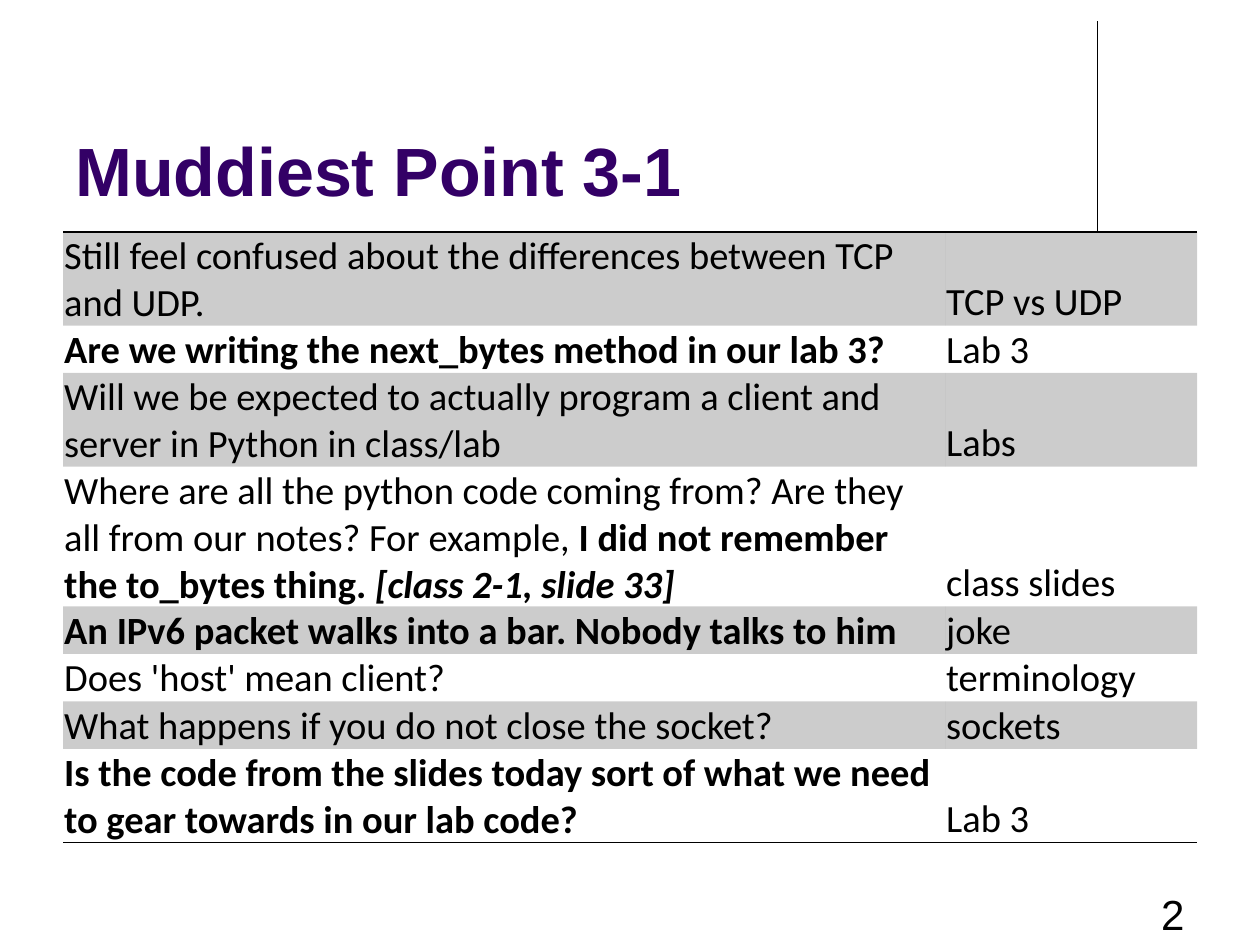
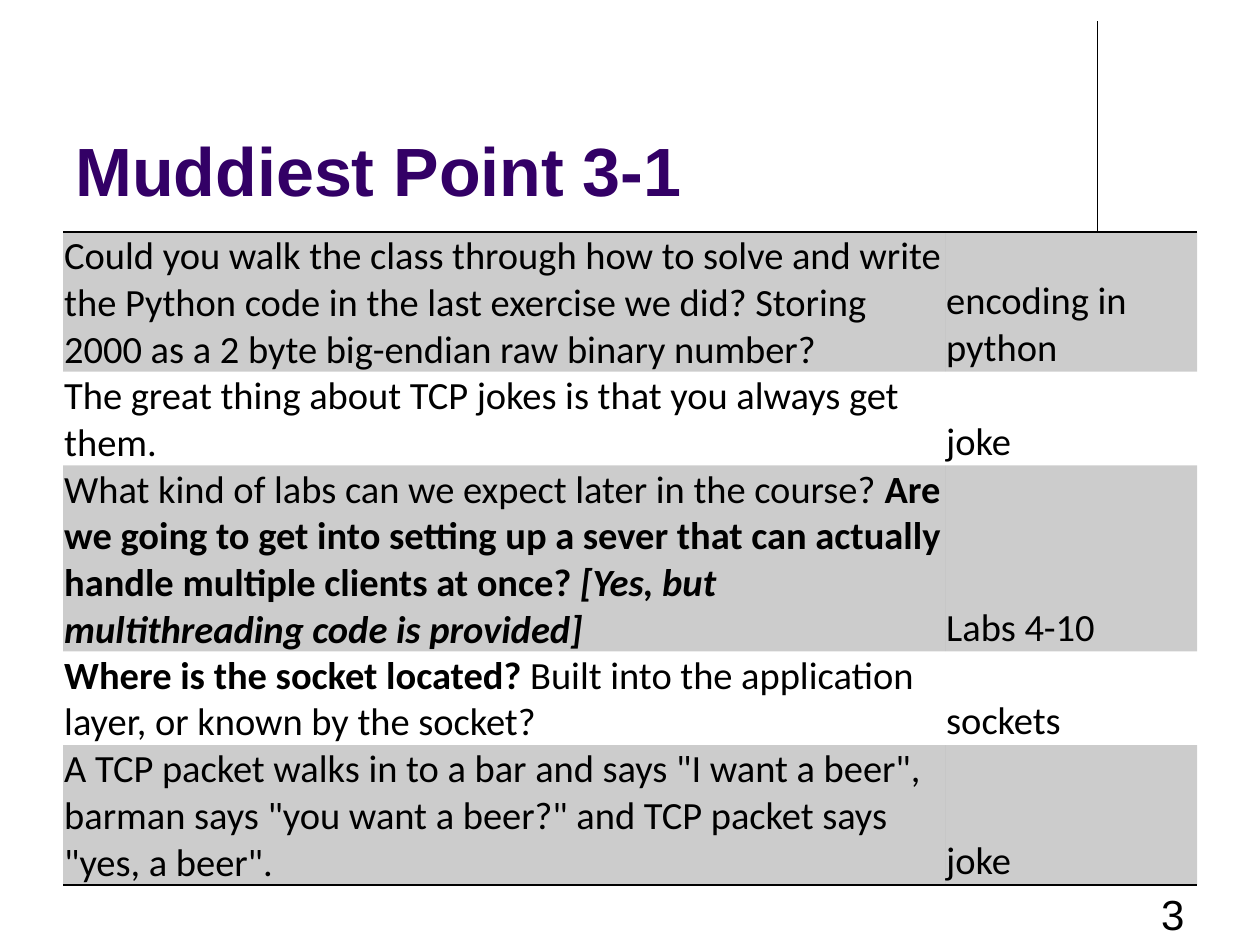
from collections import namedtuple

from lxml import etree
from pptx import Presentation
from pptx.dml.color import RGBColor
from pptx.enum.shapes import MSO_CONNECTOR
from pptx.enum.text import MSO_ANCHOR, PP_ALIGN
from pptx.oxml.ns import qn
from pptx.util import Inches, Pt

STRAIGHT = MSO_CONNECTOR.STRAIGHT
TOP, BOTTOM = MSO_ANCHOR.TOP, MSO_ANCHOR.BOTTOM
LEFT, RIGHT = PP_ALIGN.LEFT, PP_ALIGN.RIGHT

Box = namedtuple("Box", "left top width height")
UNIT = Inches(0.5)
COLUMNS, ROWS = 20, 15
TITLE_BOX = Box(1, 0.6, 16.5, 2.84)
RULE_BOX = Box(17.42, 0.34, 0, 3.32)
NUMBER_BOX = Box(14.34, 14, 4.66, 1)
TABLE_LEFT, TABLE_TOP, TABLE_WIDTH = 1, 3.68, 18
QUESTION_SHARE = 7 / 9
ROW_MINIMUM = 0.26

PURPLE, BLACK = "330066", "000000"
BAND_OPACITY = 20
HEADING_FONT, TABLE_FONT = "Arial", "Calibri"
PLAIN, BOLD, BOLD_ITALIC = (False, False), (True, False), (True, True)

TITLE = "Muddiest Point 3-1"
PAGES = [
    (2, 9.66, [
        ([("Still feel confused about the differences between TCP and UDP.", PLAIN)],
         "TCP vs UDP"),
        ([("Are we writing the next_bytes method in our lab 3?", BOLD)], "Lab 3"),
        ([("Will we be expected to actually program a client and server in Python "
           "in class/lab", PLAIN)], "Labs"),
        ([("Where are all the python code coming from? Are they all from our notes? "
           "For example, ", PLAIN),
          ("I did not remember the to_bytes thing. ", BOLD),
          ("[class 2-1, slide 33]", BOLD_ITALIC)], "class slides"),
        ([("An IPv6 packet walks into a bar. Nobody talks to him", BOLD)], "joke"),
        ([("Does 'host' mean client?", PLAIN)], "terminology"),
        ([("What happens if you do not close the socket?", PLAIN)], "sockets"),
        ([("Is the code from the slides today sort of what we need to gear towards "
           "in our lab code?", BOLD)], "Lab 3"),
    ]),
    (3, 10.34, [
        ([("Could you walk the class through how to solve and write the Python code "
           "in the last exercise we did? Storing 2000 as a 2 byte big-endian raw "
           "binary number?", PLAIN)], "encoding in python"),
        ([("The great thing about TCP jokes is that you always get them.", PLAIN)],
         "joke"),
        ([("What kind of labs can we expect later in the course? ", PLAIN),
          ("Are we going to get into setting up a sever that can actually handle "
           "multiple clients at once? ", BOLD),
          ("[Yes, but multithreading code is provided]", BOLD_ITALIC)], "Labs 4-10"),
        ([("Where is the socket located?", BOLD),
          (" Built into the application layer, or known by the socket?", PLAIN)],
         "sockets"),
        ([('A TCP packet walks in to a bar and says "I want a beer", barman says '
           '"you want a beer?" and TCP packet says "yes, a beer".', PLAIN)], "joke"),
    ]),
]


def units(count):
    """Turn grid units into a whole length."""
    return round(count * UNIT)


def color(hex_string):
    """Turn a hex string into a colour."""
    return RGBColor.from_string(hex_string)


def add_spans(para, spans, font_name, size, hex_string):
    """Write styled spans into a paragraph."""
    for text, (bold, italic) in spans:
        span = para.add_run()
        span.text = text
        font = span.font
        font.name, font.size = font_name, Pt(size)
        font.bold, font.italic = bold, italic
        font.color.rgb = color(hex_string)


def add_label(page, box, spans, size, hex_string, anchor=TOP, align=LEFT):
    """Place one line of heading type in a box."""
    frame = page.shapes.add_textbox(*map(units, box)).text_frame
    frame.word_wrap = True
    frame.vertical_anchor = anchor
    para = frame.paragraphs[0]
    para.alignment = align
    add_spans(para, spans, HEADING_FONT, size, hex_string)


def add_rule(page, box):
    """Draw the thin vertical rule beside the title."""
    rule = page.shapes.add_connector(
        STRAIGHT, units(box.left), units(box.top),
        units(box.left + box.width), units(box.top + box.height))
    rule.line.color.rgb = color(BLACK)
    rule.line.width = Pt(0.75)
    etree.SubElement(rule.element.spPr, qn("a:effectLst"))


def set_borders(cell, visible):
    """Show the named cell borders and hide the others."""
    properties = cell._tc.get_or_add_tcPr()
    for side in "LRTB":
        line = etree.SubElement(properties, qn(f"a:ln{side}"), w=str(Pt(1)))
        if side in visible:
            fill = etree.SubElement(line, qn("a:solidFill"))
            etree.SubElement(fill, qn("a:srgbClr"), val=BLACK)
        else:
            etree.SubElement(line, qn("a:noFill"))


def fill_band(cell, shaded):
    """Shade a cell with translucent black or leave it clear."""
    if not shaded:
        cell.fill.background()
        return
    cell.fill.solid()
    cell.fill.fore_color.rgb = color(BLACK)
    shade = cell._tc.get_or_add_tcPr().find(qn("a:solidFill"))[0]
    etree.SubElement(shade, qn("a:alpha"), val=str(BAND_OPACITY * 1000))


def fill_cell(cell, spans):
    """Write the spans at the bottom of a tight cell."""
    cell.margin_left = cell.margin_right = cell.margin_top = Inches(0.01)
    cell.margin_bottom = 0
    cell.vertical_anchor = BOTTOM
    add_spans(cell.text_frame.paragraphs[0], spans, TABLE_FONT, 22, BLACK)


def add_question_table(page, box, questions):
    """Build the banded table of questions and topics."""
    holder = page.shapes.add_table(len(questions), 2, *map(units, box))
    table = holder.table
    table.first_row = table.horz_banding = False
    for column, share in zip(table.columns, (QUESTION_SHARE, 1 - QUESTION_SHARE)):
        column.width = units(box.width * share)
    last = len(questions) - 1
    for index, (question, topic) in enumerate(questions):
        table.rows[index].height = units(ROW_MINIMUM)
        visible = {0: "T", last: "B"}.get(index, "")
        for column, spans in enumerate((question, [(topic, PLAIN)])):
            cell = table.cell(index, column)
            set_borders(cell, visible)
            fill_band(cell, index % 2 == 0)
            fill_cell(cell, spans)
    holder.height = units(box.height)


def add_question_page(deck, number, table_height, questions):
    """Add a page with title, rule, question table and page number."""
    page = deck.slides.add_slide(deck.slide_layouts[6])
    add_rule(page, RULE_BOX)
    add_label(page, TITLE_BOX, [(TITLE, BOLD)], 39, PURPLE, anchor=BOTTOM)
    table_box = Box(TABLE_LEFT, TABLE_TOP, TABLE_WIDTH, table_height)
    add_question_table(page, table_box, questions)
    add_label(page, NUMBER_BOX, [(str(number), PLAIN)], 24, BLACK, align=RIGHT)


def main():
    """Build and save the deck."""
    deck = Presentation()
    deck.slide_width, deck.slide_height = units(COLUMNS), units(ROWS)
    for content in PAGES:
        add_question_page(deck, *content)
    deck.save("out.pptx")


if __name__ == "__main__":
    main()
